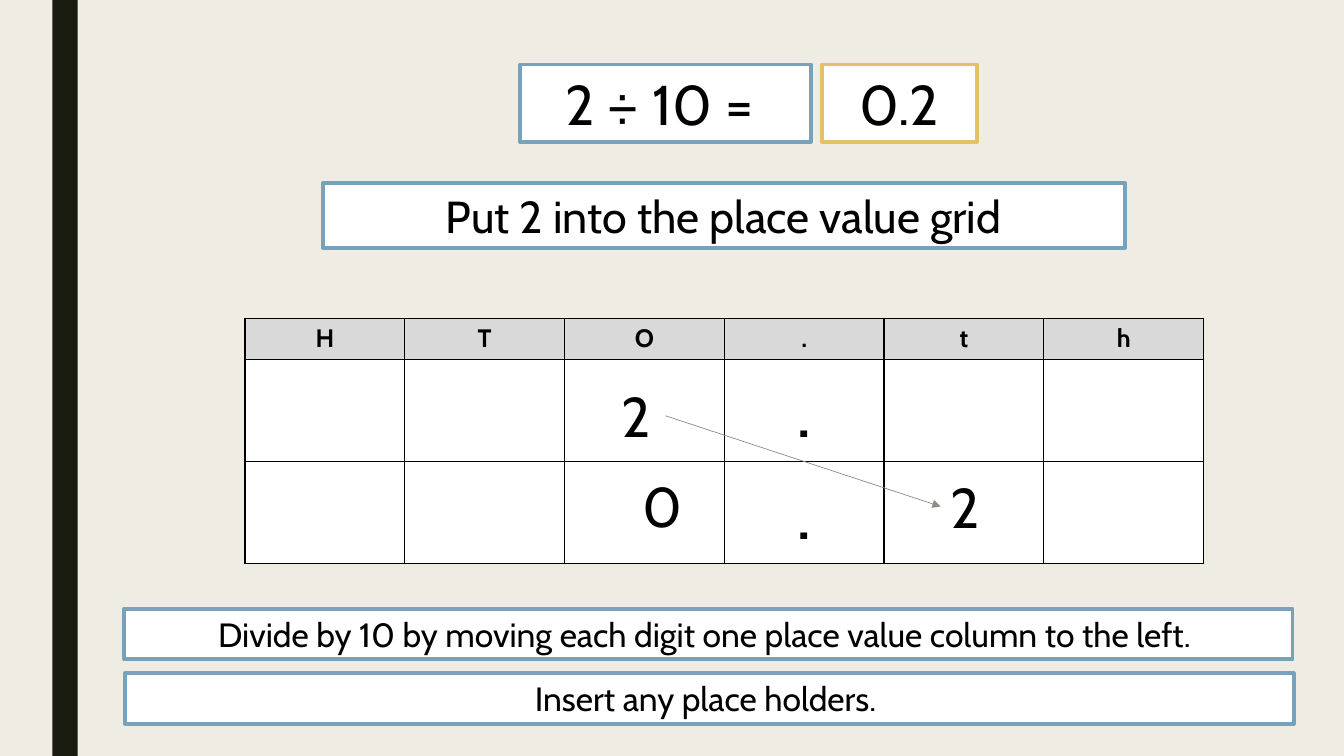
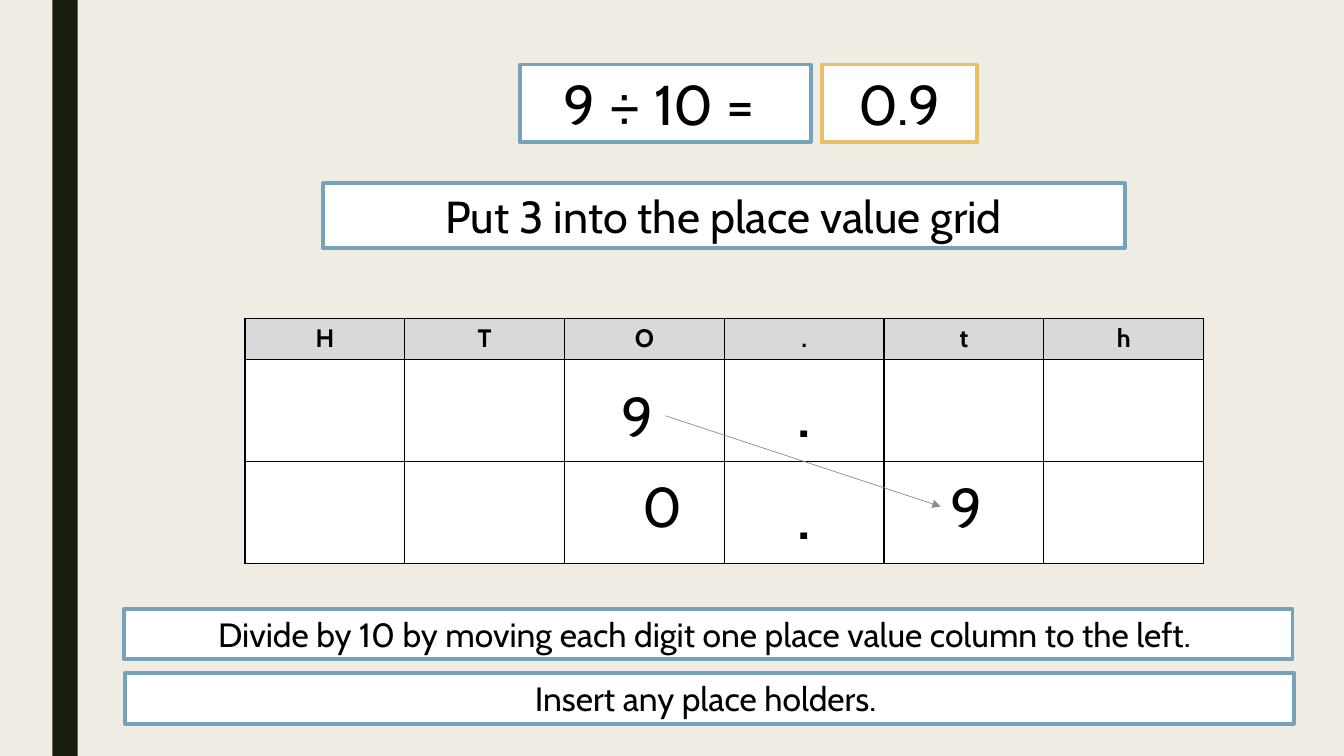
from lxml import etree
from pptx import Presentation
from pptx.dml.color import RGBColor
from pptx.enum.shapes import MSO_CONNECTOR, MSO_SHAPE
from pptx.enum.text import MSO_ANCHOR, MSO_AUTO_SIZE, PP_ALIGN
from pptx.oxml.ns import qn
from pptx.util import Inches, Pt

RECT = MSO_SHAPE.RECTANGLE
STRAIGHT = MSO_CONNECTOR.STRAIGHT
MIDDLE = MSO_ANCHOR.MIDDLE
GROW = MSO_AUTO_SIZE.SHAPE_TO_FIT_TEXT
LEFT, CENTER = PP_ALIGN.LEFT, PP_ALIGN.CENTER

CREAM = RGBColor(0xEF, 0xED, 0xE3)
DARK = RGBColor(0x19, 0x1B, 0x0E)
BLACK = RGBColor(0, 0, 0)
WHITE = RGBColor(0xFF, 0xFF, 0xFF)
SILVER = RGBColor(0xD9, 0xD9, 0xD9)
BLUE = RGBColor(0x77, 0xA2, 0xBB)
GOLD = RGBColor(0xE6, 0xC0, 0x69)
GRAY = RGBColor(0x8C, 0x8D, 0x86)

FONT = "Cabin"
HEADS = ["H", "T", "O", ".", "t", "h"]
POINT = HEADS.index(".")
WIDTH = 9.51
HEIGHTS = [0.4, 1.01, 1.01]
SUMS = [("2", "2"), ("9", "3")]


def write(frame, text, size=40, bold=False, align=CENTER):
    para = frame.paragraphs[0]
    para.alignment = align
    run = para.add_run()
    run.text = text
    run.font.name = FONT
    run.font.size = Pt(size)
    run.font.bold = bold
    run.font.color.rgb = BLACK


def block(slide, place, fill):
    shape = slide.shapes.add_shape(RECT, *map(Inches, place))
    shape.shadow.inherit = False
    shape.fill.solid()
    shape.fill.fore_color.rgb = fill
    shape.line.fill.background()
    return shape


def panel(slide, place, text, size=40, edge=BLUE):
    shape = block(slide, place, WHITE)
    shape.line.color.rgb = edge
    shape.line.width = Pt(2.75)
    shape.text_frame.word_wrap = True
    shape.text_frame.auto_size = GROW
    write(shape.text_frame, text, size=size)


def digit(slide, left, top, text):
    box = slide.shapes.add_textbox(*map(Inches, (left, top, 0.53, 0.77)))
    box.text_frame.word_wrap = True
    box.text_frame.auto_size = GROW
    write(box.text_frame, text, align=LEFT)
    return box


def arrow(slide, start, goal):
    line = slide.shapes.add_connector(STRAIGHT, 0, 0, 0, 0)
    line.begin_connect(start, 3)
    line.end_connect(goal, 1)
    line.line.color.rgb = GRAY
    line.line.width = Pt(0.5)
    etree.SubElement(line.line._get_or_add_ln(), qn("a:tailEnd"), type="triangle")
    etree.SubElement(line._element.spPr, qn("a:effectLst"))


def border(cell):
    props = cell._tc.get_or_add_tcPr()
    for spot, side in enumerate(("lnL", "lnR", "lnT", "lnB")):
        edge = etree.Element(qn("a:" + side), w=str(Pt(1)))
        fill = etree.SubElement(edge, qn("a:solidFill"))
        etree.SubElement(fill, qn("a:srgbClr"), val=str(BLACK))
        props.insert(spot, edge)


def grid(slide):
    place = map(Inches, (2.43, 3.16, WIDTH, sum(HEIGHTS)))
    table = slide.shapes.add_table(len(HEIGHTS), len(HEADS), *place).table
    for col in table.columns:
        col.width = Inches(WIDTH / len(HEADS))
    for row, height in zip(table.rows, HEIGHTS):
        row.height = Inches(height)
    for cell in table.iter_cells():
        cell.fill.solid()
        cell.fill.fore_color.rgb = WHITE
        border(cell)
    for col, head in enumerate(HEADS):
        cell = table.cell(0, col)
        cell.fill.fore_color.rgb = SILVER
        write(cell.text_frame, head, size=18, bold=True)
    for row in range(1, len(HEIGHTS)):
        cell = table.cell(row, POINT)
        cell.vertical_anchor = MIDDLE
        write(cell.text_frame, ".", size=54)


def build(deck, num, shown):
    slide = deck.slides.add_slide(deck.slide_layouts[6])
    block(slide, (0.52, 0, 0.25, 7.5), DARK)
    grid(slide)
    panel(slide, (5.16, 0.64, 2.88, 0.77), f"{num} ÷ 10 = ")
    panel(slide, (8.15, 0.64, 1.54, 0.77), f"0.{num}", edge=GOLD)
    panel(slide, (3.2, 1.82, 7.96, 0.64), f"Put {shown} into the place value grid", size=32)
    start = digit(slide, 6.07, 3.74, num)
    goal = digit(slide, 9.33, 4.64, num)
    digit(slide, 6.27, 4.63, "0")
    arrow(slide, start, goal)
    rule = "Divide by 10 by moving each digit one place value column to the left. "
    panel(slide, (1.23, 6.04, 11.59, 0.5), rule, size=24)
    panel(slide, (1.24, 6.68, 11.59, 0.5), "Insert any place holders. ", size=24)


def main():
    deck = Presentation()
    deck.slide_width = Inches(13.33)
    deck.slide_height = Inches(7.5)
    back = deck.slide_master.background.fill
    back.solid()
    back.fore_color.rgb = CREAM
    for num, shown in SUMS:
        build(deck, num, shown)
    deck.save("out.pptx")


if __name__ == "__main__":
    main()
